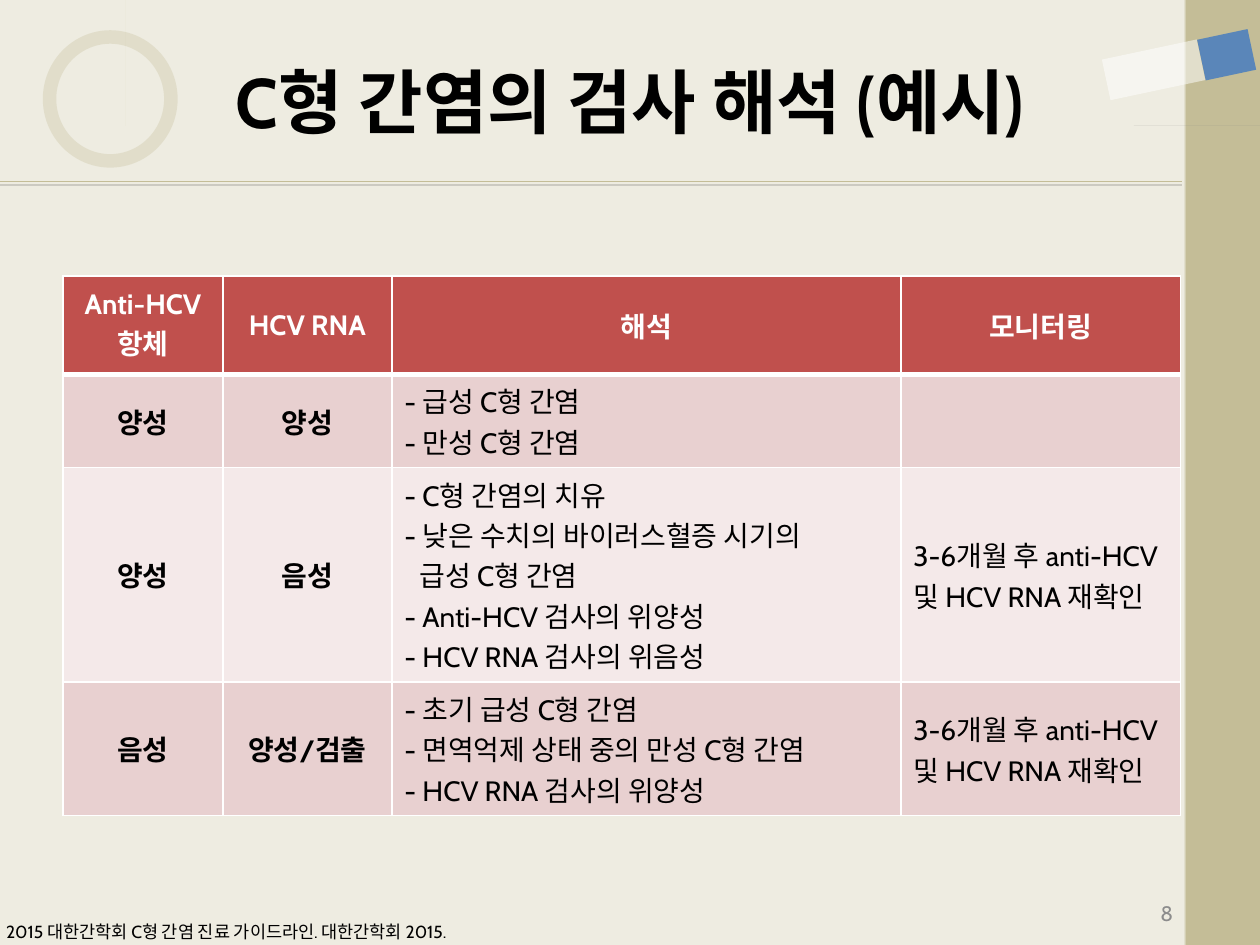
"""Build a slide that explains hepatitis C test results in a table."""
from dataclasses import dataclass

from lxml.etree import SubElement
from pptx import Presentation
from pptx.dml.color import RGBColor as Color
from pptx.enum.shapes import MSO_CONNECTOR as Connector, MSO_SHAPE as Shape
from pptx.enum.text import MSO_ANCHOR as Anchor, PP_ALIGN as Align
from pptx.oxml import parse_xml
from pptx.oxml.ns import nsdecls, qn
from pptx.util import Inches, Pt


@dataclass(frozen=True)
class Theme:
    font: str = "Cabin"
    ground: str = "EEECE1"
    tan: str = "C4BD97"
    pale_tan: str = "DDD9C3"
    blue: str = "4F81BD"
    grey: str = "808080"
    number: str = "8C8C8C"
    red: str = "C0504D"
    bands: tuple = ("E8D0D0", "F4E9E9")
    ink: str = "000000"
    white: str = "FFFFFF"
    title_size: int = 40
    table_size: int = 16
    number_size: int = 12
    source_size: int = 10


theme = Theme()


def paint(shape, color, opacity=100):
    shape.shadow.inherit = False
    shape.line.fill.background()
    shape.fill.solid()
    shape.fill.fore_color.rgb = Color.from_string(color)
    if opacity < 100:
        tone = shape.fill._xPr.find(qn("a:solidFill"))[0]
        SubElement(tone, qn("a:alpha")).set("val", str(opacity * 1000))


def write(para, text, size, color, bold=False, align=Align.LEFT):
    para.text = text
    para.alignment = align
    para.font.name = theme.font
    para.font.size = Pt(size)
    para.font.bold = bold
    para.font.color.rgb = Color.from_string(color)


deck = Presentation()
deck.slide_width, deck.slide_height = Inches(10), Inches(7.5)
page = deck.slides.add_slide(deck.slide_layouts[5])
page.background.fill.solid()
page.background.fill.fore_color.rgb = Color.from_string(theme.ground)
shapes = page.shapes

rule = shapes.add_connector(
    Connector.STRAIGHT, Inches(0), Inches(1.44), Inches(9.38), Inches(1.44))
rule.line.color.rgb = Color.from_string(theme.tan)
rule.line.width = Pt(0.75)
rule._element.spPr.append(parse_xml(
    f'<a:effectLst {nsdecls("a")}><a:outerShdw dist="25400" dir="5400000">'
    '<a:srgbClr val="000000"><a:alpha val="22000"/></a:srgbClr>'
    '</a:outerShdw></a:effectLst>'))

ring = shapes.add_shape(
    Shape.DONUT, Inches(0.34), Inches(0.24), Inches(1.07), Inches(1.09))
ring.adjustments[0] = 0.1
paint(ring, theme.tan, 30)

arrow_curves = [
    [(1.18, 0.73), (1.12, 0.68), (0.92, 0.51), (0.85, 0.47)],
    [(0.85, 0.47), (0.81, 0.46), (0.79, 0.48), (0.76, 0.5)],
    [(0.76, 0.5), (0.73, 0.52), (0.72, 0.57), (0.75, 0.61)],
    [(0.84, 0.69)],
    [(0.61, 0.69), (0.55, 0.71), (0.54, 0.76), (0.54, 0.79)],
    [(0.54, 0.79), (0.53, 0.83), (0.56, 0.88), (0.61, 0.89)],
    [(0.86, 0.89)],
    [(0.74, 0.99), (0.73, 1.02), (0.73, 1.07), (0.75, 1.09)],
    [(0.75, 1.09), (0.77, 1.11), (0.8, 1.13), (0.84, 1.13)],
    [(0.84, 1.13), (1.01, 0.99), (1.19, 0.85), (1.19, 0.85)],
    [(1.19, 0.85), (1.21, 0.82), (1.2, 0.81), (1.2, 0.79)],
    [(1.2, 0.79), (1.2, 0.77), (1.2, 0.75), (1.18, 0.73)],
]
fold_curves = [
    [(9.9, 0.57)],
    [(9.93, 0.69), (9.28, 0.68), (9.15, 0.76), (8.85, 0.8)],
    [(8.85, 0.8), (9.2, 0.72), (9.55, 0.65), (9.9, 0.57)],
]
steps = 8
for curves, color, opacity in [
    (arrow_curves, theme.tan, 30), (fold_curves, theme.grey, 85),
]:
    points = []
    for curve in curves:
        if len(curve) == 1:
            points += curve
            continue
        for step in range(steps + 1):
            t = step / steps
            weights = ((1 - t) ** 3, 3 * t * (1 - t) ** 2, 3 * t * t * (1 - t), t ** 3)
            points.append(tuple(
                sum(weight * point[axis] for weight, point in zip(weights, curve))
                for axis in (0, 1)))
    builder = shapes.build_freeform(*points[0], scale=Inches(1))
    builder.add_line_segments(points[1:])
    paint(builder.convert_to_shape(), color, opacity)

for left, top, width, height, turn, color, opacity in [
    (9.41, 0, 0.59, 7.5, 0, theme.tan, 100),
    (9.4, 0, 0.43, 7.5, 0, theme.pale_tan, 100),
    (9.57, 0.23, 0.33, 0.41, 78, theme.blue, 90),
    (8.99, 0.17, 0.33, 0.77, 78, theme.white, 50),
]:
    block = shapes.add_shape(
        Shape.RECTANGLE, Inches(left), Inches(top), Inches(width), Inches(height))
    block.rotation = turn
    paint(block, color, opacity)
    if turn == 0:
        shapes._spTree.remove(block._element)
        shapes._spTree.insert(2, block._element)
        if color == theme.pale_tan:
            shapes._spTree.insert(3, block._element)

title = shapes.title
title.left, title.top = Inches(0.5), Inches(0.17)
title.width, title.height = Inches(9), Inches(1.25)
title.text_frame.vertical_anchor = Anchor.MIDDLE
write(title.text_frame.paragraphs[0], "C형 간염의 검사 해석 (예시)",
      theme.title_size, theme.ink, True, Align.CENTER)

recheck = ["3-6개월 후 anti-HCV 및 HCV RNA 재확인"]
continuation = "급성 C형 간염"
rows = [
    (0.78, [["Anti-HCV 항체"], ["HCV RNA"], ["해석"], ["모니터링"]]),
    (0.7, [["양성"], ["양성"], ["- 급성 C형 간염", "- 만성 C형 간염"], []]),
    (1.59, [["양성"], ["음성"],
            ["- C형 간염의 치유", "- 낮은 수치의 바이러스혈증 시기의", continuation,
             "- Anti-HCV 검사의 위양성", "- HCV RNA 검사의 위음성"], recheck]),
    (1, [["음성"], ["양성/검출"],
         ["- 초기 급성 C형 간염", "- 면역억제 상태 중의 만성 C형 간염",
          "- HCV RNA 검사의 위양성"], recheck]),
]
table = shapes.add_table(
    len(rows), 4, Inches(0.5), Inches(2.19), Inches(8.87), Inches(4.07)).table
for column, width in zip(table.columns, (1.27, 1.34, 4.04, 2.22)):
    column.width = Inches(width)
for row_index, (height, entries) in enumerate(rows):
    table.rows[row_index].height = Inches(height)
    header = row_index == 0
    for column_index, lines in enumerate(entries):
        cell = table.cell(row_index, column_index)
        cell.vertical_anchor = Anchor.MIDDLE
        label = header or column_index < 2
        for line_index, line in enumerate(lines):
            frame = cell.text_frame
            para = frame.add_paragraph() if line_index else frame.paragraphs[0]
            write(para, line, theme.table_size, theme.white if header else theme.ink,
                  label, Align.CENTER if label else Align.LEFT)
            if line == continuation:
                para._p.get_or_add_pPr().set("marL", str(Inches(0.12)))
        properties = cell._tc.get_or_add_tcPr()
        for side in "LRTB":
            heavy = (header and side == "B") or (row_index == 1 and side == "T")
            properties.append(parse_xml(
                f'<a:ln{side} {nsdecls("a")} w="{Pt(3 if heavy else 1)}"><a:solidFill>'
                f'<a:srgbClr val="{theme.white}"/></a:solidFill></a:ln{side}>'))
        cell.fill.solid()
        cell.fill.fore_color.rgb = Color.from_string(
            theme.red if header else theme.bands[(row_index - 1) % 2])

for left, top, width, height, text, size, color, align, anchor in [
    (7.08, 7.08, 2.33, 0.33, "8", theme.number_size, theme.number,
     Align.RIGHT, Anchor.MIDDLE),
    (-0.05, 7.26, 6.05, 0.27, "2015 대한간학회 C형 간염 진료 가이드라인. 대한간학회 2015.",
     theme.source_size, theme.ink, Align.LEFT, Anchor.TOP),
]:
    box = shapes.add_textbox(Inches(left), Inches(top), Inches(width), Inches(height))
    box.text_frame.word_wrap = True
    box.text_frame.vertical_anchor = anchor
    write(box.text_frame.paragraphs[0], text, size, color, align=align)

deck.save("out.pptx")
